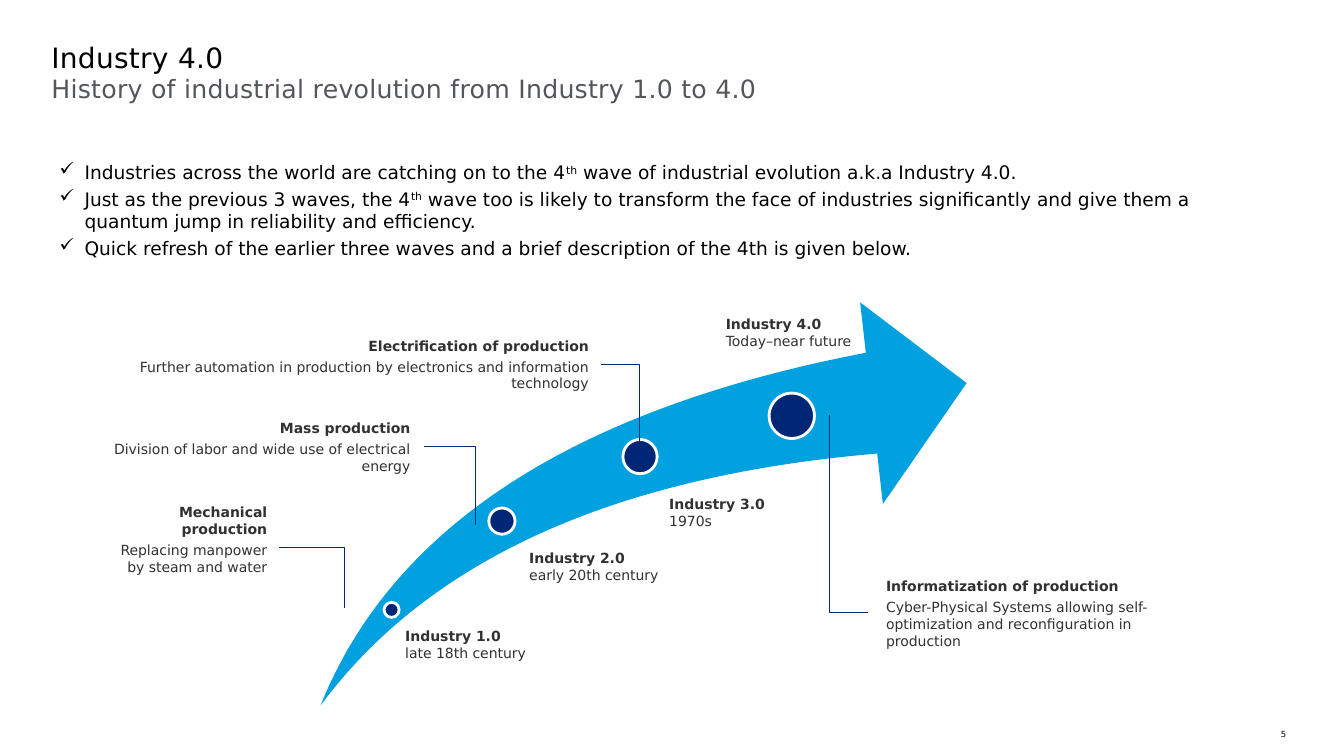
from lxml import etree
from pptx import Presentation
from pptx.dml.color import RGBColor
from pptx.enum.shapes import MSO_CONNECTOR, MSO_SHAPE
from pptx.enum.text import MSO_ANCHOR, PP_ALIGN
from pptx.oxml.ns import qn
from pptx.util import Inches, Pt

LEFT, RIGHT = PP_ALIGN.LEFT, PP_ALIGN.RIGHT
TOP, MIDDLE = MSO_ANCHOR.TOP, MSO_ANCHOR.MIDDLE
ELBOW = MSO_CONNECTOR.ELBOW
OVAL, SWOOSH = MSO_SHAPE.OVAL, MSO_SHAPE.SWOOSH_ARROW

COLS, ROWS = 160, 90
CELL = Inches(7.5) / ROWS
COLORS = {"black": "000000", "grey": "53565A", "text": "313131",
          "sky": "00A1DE", "navy": "002776", "white": "FFFFFF"}
FONT = "DejaVu Sans"


def grid(*cells):
    return [round(c * CELL) for c in cells]


def color(name):
    return RGBColor.from_string(COLORS[name])


class Canvas:
    """Draws styled elements on a slide; lengths are grid cells."""

    def __init__(self, slide):
        self.slide = slide
        self.shapes = slide.shapes

    def group(self):
        self.shapes = self.slide.shapes.add_group_shape().shapes

    def ungroup(self):
        self.shapes = self.slide.shapes

    def shape(self, kind, box, fill, line=None):
        sp = self.shapes.add_shape(kind, *grid(*box))
        sp.shadow.inherit = False
        sp.fill.solid()
        sp.fill.fore_color.rgb = color(fill)
        if line:
            sp.line.color.rgb = color(line)
            sp.line.width = Pt(2)
        else:
            sp.line.fill.background()
        return sp

    def dot(self, x, y, size):
        self.shape(OVAL, (x - size / 2, y - size / 2, size, size), "navy", "white")

    def elbow(self, start, end):
        cx = self.shapes.add_connector(ELBOW, *grid(*start, *end))
        cx.line.color.rgb = color("navy")
        cx.line.width = Pt(0.75)
        spPr = cx._element.spPr
        spPr.find(qn("a:prstGeom")).set("prst", "bentConnector2")
        etree.SubElement(spPr, qn("a:effectLst"))

    def text(self, box, paras, size, fill, inset=(0, 0, 0, 0), anchor=TOP,
             wrap=True, fmt=None, spacing=0, before=0, bullet=None):
        """Each paragraph is a list of (text, run properties) pairs."""
        tf = self.shapes.add_textbox(*grid(*box)).text_frame
        left, top, right, bottom = grid(*inset)
        frame = {"word_wrap": wrap, "vertical_anchor": anchor,
                 "margin_left": left, "margin_top": top,
                 "margin_right": right, "margin_bottom": bottom}
        for key, value in frame.items():
            setattr(tf, key, value)
        for i, runs in enumerate(paras):
            p = tf.add_paragraph() if i else tf.paragraphs[0]
            if bullet:
                pPr = p._p.get_or_add_pPr()
                pPr.set("marL", str(Inches(0.25)))
                pPr.set("indent", str(-Inches(0.25)))
                etree.SubElement(pPr, qn("a:buChar"), char=bullet)
            for key, value in (fmt or {}).items():
                setattr(p, key, value)
            if i and before:
                p.space_before = Pt(before)
            for words, props in runs:
                r = p.add_run()
                r.text = words
                font = {"name": FONT, "size": Pt(size), "bold": props.get("bold", False)}
                for key, value in font.items():
                    setattr(r.font, key, value)
                r.font.color.rgb = color(fill)
                if spacing:
                    r.font._element.set("spc", str(spacing))
                if props.get("raised"):
                    r.font._element.set("baseline", "30000")

    def title(self, y, words, size, fill):
        self.text((6.12, y, 147.72, 3.6), [[(words, {})]], size, fill,
                  fmt={"line_spacing": 0.9}, spacing=20)

    def caption(self, box, head, body, **style):
        """A bold heading over a plain line."""
        self.text(box, [[(head, {"bold": True})], [(body, {})]], 10, "text", **style)


BULLETS = [
    [("Industries across the world are catching on to the 4", {}), ("th", {"raised": True}),
     (" wave of industrial evolution a.k.a Industry 4.0.", {})],
    [("Just as the previous 3 waves, the 4", {}), ("th", {"raised": True}),
     (" wave too is likely to transform the face of industries significantly and "
      "give them a quantum jump in reliability and efficiency.", {})],
    [("Quick refresh of the earlier three waves and a brief description of the 4th "
      "is given below.", {})],
]

# dot (centre, size), label box, label left inset, name, period
STAGES = [
    ((46.62, 72.6, 1.8), (47.28, 73.08, 16.44, 7.32), 0.96, "Industry 1.0", "late 18th century"),
    ((59.76, 62.04, 3.12), (61.32, 64.08, 20.16, 6.6), 1.68, "Industry 2.0", "early 20th century"),
    ((76.2, 54.36, 4.08), (77.52, 57.96, 21.24, 6), 2.16, "Industry 3.0", "1970s"),
    ((94.26, 49.5, 5.4), (83.52, 36.6, 23.88, 6), 2.88, "Industry 4.0", "Today–near future"),
]

# box, alignment, anchor, heading, description, elbow start, elbow end
NOTES = [
    ((11.76, 59.04, 21.48, 10.44), RIGHT, TOP, "Mechanical production",
     "Replacing manpower by steam and water", (33.24, 65.22), (41, 72.36)),
    ((11.76, 49.68, 38.52, 7.08), RIGHT, MIDDLE, "Mass production",
     "Division of labor and wide use of electrical energy", (50.52, 53.16), (56.6, 62.52)),
    ((11.76, 39.12, 59.76, 8.52), RIGHT, MIDDLE, "Electrification of production",
     "Further automation in production by electronics and information technology",
     (71.52, 43.36), (76.14, 54.36)),
    ((104.04, 67.8, 37.44, 10.44), LEFT, MIDDLE, "Informatization of production",
     "Cyber-Physical Systems allowing self-optimization and reconfiguration in production",
     (103.32, 72.92), (98.76, 49.44)),
]


def main():
    prs = Presentation()
    prs.slide_width, prs.slide_height = grid(COLS, ROWS)
    s = prs.slides.add_slide(prs.slide_layouts[6])
    c = Canvas(s)

    # Titles and bullets
    c.title(5.28, "Industry 4.0", 20, "black")
    c.title(9.12, "History of industrial revolution from Industry 1.0 to 4.0", 18, "grey")
    c.text((5.88, 18.6, 143.4, 12.96), BULLETS, 13.3, "black", inset=(1.2, 0.6, 1.2, 0.6),
           fmt={"space_after": Pt(3)}, bullet="✓")

    # Arrow with its stages
    c.group()
    arrow = c.shape(SWOOSH, (38.16, 36, 76.92, 48), "sky")
    for i in range(2):
        arrow.adjustments[i] = 0.25
    for dot, box, inset, name, period in STAGES:
        c.dot(*dot)
        c.caption(box, name, period, inset=(inset, 0, 0, 0), anchor=MIDDLE)
    c.ungroup()

    # Notes tied to the stages
    for box, align, anchor, head, body, start, end in NOTES:
        c.elbow(start, end)
        c.caption(box, head, body, inset=(1.44, 0.96, 1.44, 0.96), anchor=anchor,
                  fmt={"alignment": align}, before=3)

    # Page number
    c.text((151.32, 86.16, 3.12, 2.4), [[("5", {})]], 6, "black",
           inset=(1.2, 0.6, 1.2, 0.6), wrap=False)

    prs.save("out.pptx")


if __name__ == "__main__":
    main()
